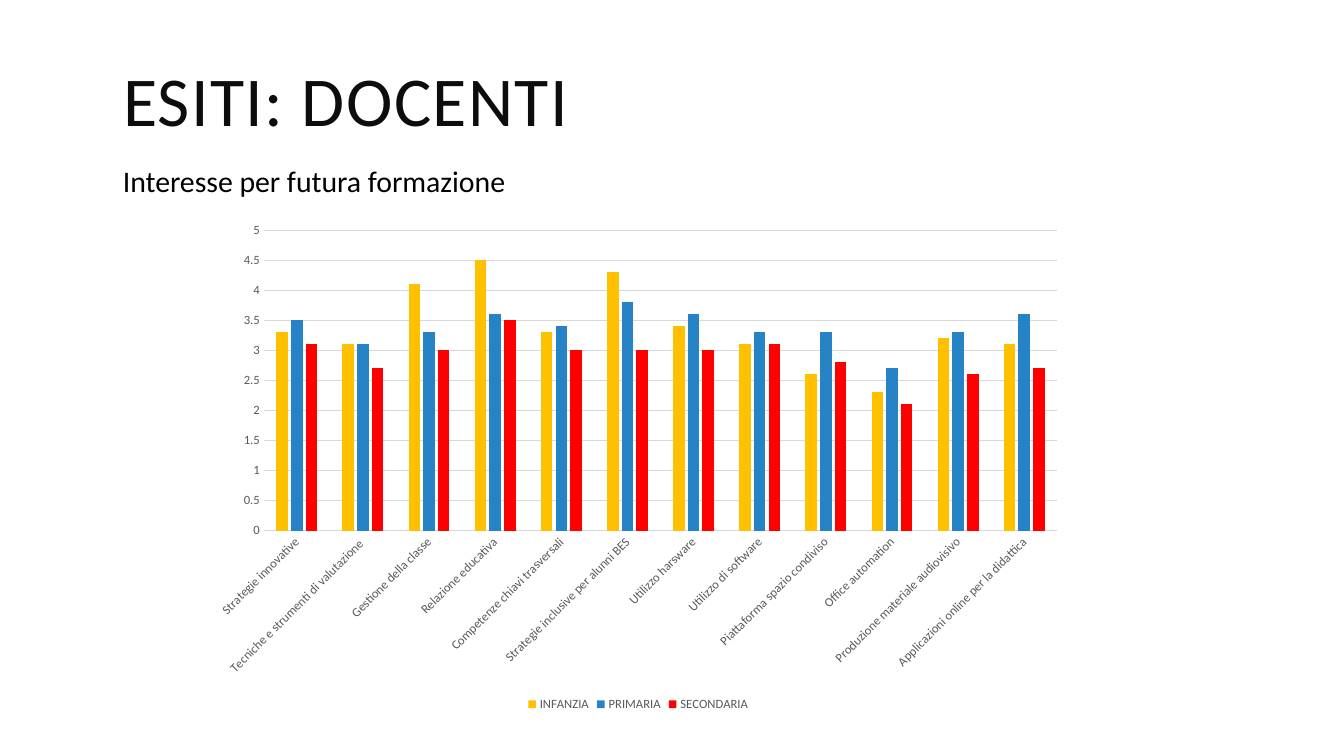
import pptx
import pptx.chart.data
import pptx.dml.color
import pptx.enum.chart
import pptx.enum.text
import pptx.util

Inches = pptx.util.Inches
Pt = pptx.util.Pt

FONT = "Calibri"
COLORS = {
    "title": "0D0D0D",
    "text": "000000",
    "labels": "595959",
    "grid": "D9D9D9",
    "INFANZIA": "FFC000",
    "PRIMARIA": "2683C6",
    "SECONDARIA": "FF0000",
}
TITLE = "ESITI: DOCENTI"
SUBTITLE = "Interesse per futura formazione"
RATINGS = [
    ("Strategie innovative", 3.3, 3.5, 3.1),
    ("Tecniche e strumenti di valutazione ", 3.1, 3.1, 2.7),
    ("Gestione della classe", 4.1, 3.3, 3),
    ("Relazione educativa", 4.5, 3.6, 3.5),
    ("Competenze chiavi trasversali", 3.3, 3.4, 3),
    ("Strategie inclusive per alunni BES", 4.3, 3.8, 3),
    ("Utilizzo harsware", 3.4, 3.6, 3),
    ("Utilizzo di software", 3.1, 3.3, 3.1),
    ("Piattaforma spazio condiviso", 2.6, 3.3, 2.8),
    ("Office automation", 2.3, 2.7, 2.1),
    ("Produzione materiale audiovisivo", 3.2, 3.3, 2.6),
    ("Applicazioni online per la didattica", 3.1, 3.6, 2.7),
]
SCHOOLS = ["INFANZIA", "PRIMARIA", "SECONDARIA"]


def rgb(name):
    return pptx.dml.color.RGBColor.from_string(COLORS[name])


def style_font(font, size, color):
    font.name = FONT
    font.size = Pt(size)
    font.bold = False
    font.color.rgb = rgb(color)


def write(shape, text, size, color, anchor, line_spacing=1.0, tracking=0):
    frame = shape.text_frame
    frame.word_wrap = True
    frame.auto_size = pptx.enum.text.MSO_AUTO_SIZE.NONE
    frame.vertical_anchor = anchor
    paragraph = frame.paragraphs[0]
    paragraph.alignment = pptx.enum.text.PP_ALIGN.LEFT
    paragraph.line_spacing = line_spacing
    run = paragraph.add_run()
    run.text = text
    style_font(run.font, size, color)
    if tracking:
        run.font._element.set("spc", str(tracking * 100))


def style_axis(axis):
    axis.major_tick_mark = pptx.enum.chart.XL_TICK_MARK.NONE
    axis.minor_tick_mark = pptx.enum.chart.XL_TICK_MARK.NONE
    style_font(axis.tick_labels.font, 9, "labels")


def style_line(line):
    line.color.rgb = rgb("grid")
    line.width = Pt(0.75)


def add_ratings_chart(slide):
    data = pptx.chart.data.CategoryChartData()
    topics, *ratings = zip(*RATINGS)
    data.categories = topics
    for school, values in zip(SCHOOLS, ratings):
        data.add_series(school, values)
    chart = slide.shapes.add_chart(
        pptx.enum.chart.XL_CHART_TYPE.COLUMN_CLUSTERED,
        Inches(2), Inches(2.11), Inches(8.66), Inches(4.99), data).chart
    style_font(chart.font, 10, "text")
    chart.has_title = False

    columns = chart.plots[0]
    columns.gap_width = 219
    columns.overlap = -27
    columns.vary_by_categories = False
    for series in columns.series:
        series.format.fill.solid()
        series.format.fill.fore_color.rgb = rgb(series.name)
        series.invert_if_negative = False

    topic_axis = chart.category_axis
    style_axis(topic_axis)
    style_line(topic_axis.format.line)
    topic_axis._element.txPr.bodyPr.set("rot", str(-45 * 60000))

    rating_axis = chart.value_axis
    style_axis(rating_axis)
    rating_axis.minimum_scale = 0
    rating_axis.maximum_scale = 5
    rating_axis.major_unit = 0.5
    rating_axis.format.line.fill.background()
    style_line(rating_axis.major_gridlines.format.line)

    chart.has_legend = True
    chart.legend.position = pptx.enum.chart.XL_LEGEND_POSITION.BOTTOM
    chart.legend.include_in_layout = False
    style_font(chart.legend.font, 9, "labels")


def main():
    deck = pptx.Presentation()
    deck.slide_width = Inches(13.33)
    deck.slide_height = Inches(7.5)
    slide = deck.slides.add_slide(deck.slide_layouts[5])

    title = slide.shapes.title
    title.left, title.top = Inches(1.12), Inches(0.6)
    title.width, title.height = Inches(8.77), Inches(0.9)
    write(title, TITLE, 50, "title", pptx.enum.text.MSO_ANCHOR.MIDDLE,
          line_spacing=0.8, tracking=1)

    subtitle = slide.shapes.add_textbox(
        Inches(1.12), Inches(1.57), Inches(9.54), Inches(0.46))
    write(subtitle, SUBTITLE, 21.3, "text", pptx.enum.text.MSO_ANCHOR.TOP)

    add_ratings_chart(slide)
    deck.save("out.pptx")


if __name__ == "__main__":
    main()
